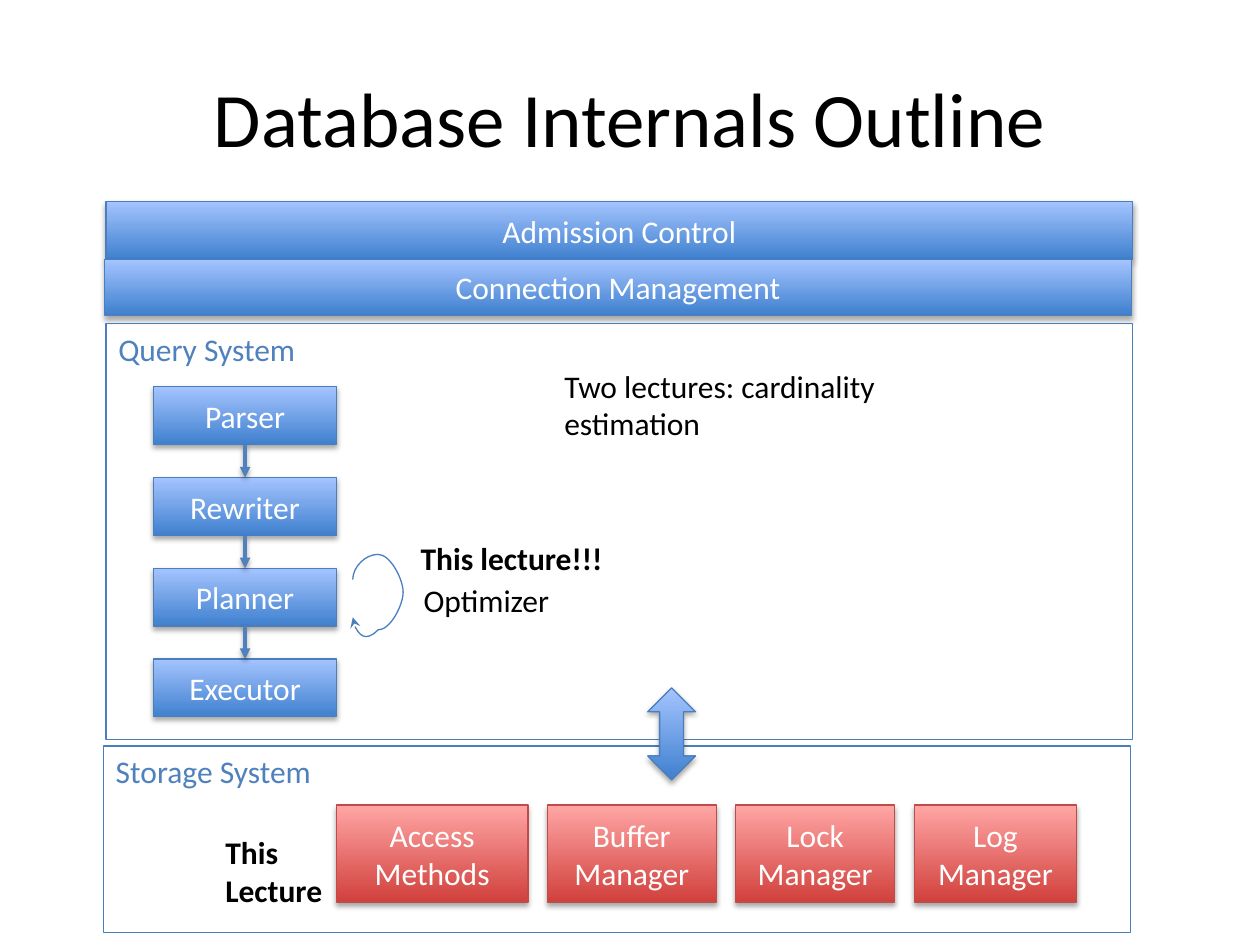
from dataclasses import dataclass

from lxml import etree
from pptx import Presentation
from pptx.dml.color import RGBColor
from pptx.enum.shapes import MSO_CONNECTOR, MSO_SHAPE
from pptx.enum.text import MSO_ANCHOR, PP_ALIGN
from pptx.oxml.ns import qn
from pptx.util import Inches, Pt

RECTANGLE, DOUBLE_ARROW = MSO_SHAPE.RECTANGLE, MSO_SHAPE.UP_DOWN_ARROW
STRAIGHT = MSO_CONNECTOR.STRAIGHT
LEFT, CENTER = PP_ALIGN.LEFT, PP_ALIGN.CENTER
TOP, MIDDLE = MSO_ANCHOR.TOP, MSO_ANCHOR.MIDDLE
BOTTOM_SITE, TOP_SITE = 2, 0
GRID = Inches(0.1)  # the slide is 100 columns by 75 rows


@dataclass(frozen=True)
class Theme:
    font: str = "Calibri"
    title_size: int = 44
    body_size: int = 18
    hairline: float = 0.75
    arrow_line: float = 2
    ink: str = "000000"
    paper: str = "FFFFFF"
    accent: str = "4F81BD"
    outline: str = "4B7EBC"
    blue: tuple = ("3F80CE", "A4C4FF", "4B7EBC")  # bottom, top, border
    red: tuple = ("D1403C", "FFA6A5", "BF4C48")


@dataclass(frozen=True)
class Box:
    """An area in grid columns and rows."""
    left: float
    top: float
    width: float
    height: float

    def inside(self, left, top, width, height):
        return Box(self.left + left, self.top + top, width, height)

    def lengths(self):
        return [round(GRID * n) for n in (self.left, self.top, self.width, self.height)]


THEME = Theme()


def color(code):
    return RGBColor.from_string(code)


def write(shape, text, ink=THEME.ink, size=THEME.body_size, align=LEFT,
          anchor=TOP, bold=False, wrap=True):
    frame = shape.text_frame
    frame.word_wrap = wrap
    frame.vertical_anchor = anchor
    para = frame.paragraphs[0]
    para.text = text
    para.alignment = align
    para.font.name, para.font.size = THEME.font, Pt(size)
    para.font.bold, para.font.color.rgb = bold, color(ink)


def add_label(page, box, text, **style):
    write(page.shapes.add_textbox(*box.lengths()), text, **style)


def set_line(shape, code, width, arrowhead=None):
    shape.line.color.rgb = color(code)
    shape.line.width = Pt(width)
    if arrowhead:
        etree.SubElement(shape.line._get_or_add_ln(), qn("a:tailEnd"), type=arrowhead)


def add_shadow(shape, opacity, blur, distance):
    """Give the shape a black shadow that falls straight down."""
    properties = shape._element.spPr
    for old in properties.findall(qn("a:effectLst")):
        properties.remove(old)
    effects = etree.SubElement(properties, qn("a:effectLst"))
    shadow = etree.SubElement(effects, qn("a:outerShdw"), blurRad=str(Pt(blur)),
                              dist=str(Pt(distance)), dir="5400000", rotWithShape="0")
    black = etree.SubElement(shadow, qn("a:srgbClr"), val=THEME.ink)
    etree.SubElement(black, qn("a:alpha"), val=str(opacity * 1000))


def add_block(page, box, palette, text="", preset=RECTANGLE):
    shape = page.shapes.add_shape(preset, *box.lengths())
    bottom, top, border = palette
    shape.fill.gradient()
    shape.fill.gradient_angle = 90
    for stop, code in zip(shape.fill.gradient_stops, (bottom, top)):
        stop.color.rgb = color(code)
    set_line(shape, border, THEME.hairline)
    add_shadow(shape, 35, 3.1, 1.8)
    if text:
        write(shape, text, THEME.paper, align=CENTER, anchor=MIDDLE)
    return shape


def add_frame(page, box, text):
    frame = page.shapes.add_shape(RECTANGLE, *box.lengths())
    frame.fill.background()
    frame.shadow.inherit = False
    set_line(frame, THEME.outline, THEME.hairline)
    write(frame, text, THEME.accent)


def join(page, upper, lower):
    arrow = page.shapes.add_connector(STRAIGHT, 0, 0, 0, 0)
    arrow.begin_connect(upper, BOTTOM_SITE)
    arrow.end_connect(lower, TOP_SITE)
    set_line(arrow, THEME.accent, THEME.arrow_line, "triangle")
    add_shadow(arrow, 38, 3.1, 1.6)


def add_loop(page, box):
    """Draw the curved arrow that leaves the planner and returns to it."""
    start, *points = [(box.left + x, box.top + y) for x, y in (
        (0, 2.5), (0.7, 1.2), (1.6, -0.1), (2.4, 0), (3.1, 0.2), (4.8, 2.5),
        (4.7, 3.6), (4.7, 4.7), (3, 6.5), (2, 6.7), (1, 7), (0.6, 6), (0.2, 5))]
    builder = page.shapes.build_freeform(*start, scale=GRID)
    builder.add_line_segments(points, close=False)
    loop = builder.convert_to_shape()
    outline = loop._element.find(".//" + qn("a:path"))
    steps = outline.findall(qn("a:lnTo"))
    for first in range(0, len(steps), 3):
        curve = etree.SubElement(outline, qn("a:cubicBezTo"))
        for step in steps[first:first + 3]:
            curve.append(step[0])
            outline.remove(step)
    loop.fill.background()
    loop.shadow.inherit = False
    set_line(loop, THEME.outline, THEME.hairline, "stealth")


def add_title(page, box, text):
    title = page.shapes.title
    title.left, title.top, title.width, title.height = box.lengths()
    write(title, text, size=THEME.title_size, align=CENTER, anchor=MIDDLE)


def add_front_end(page, box):
    add_block(page, box.inside(0.1, 0, box.width, 4.6), THEME.blue, "Admission Control")
    add_block(page, box.inside(0, 4.6, box.width, 4.4), THEME.blue, "Connection Management")


def add_query_system(page, box):
    add_frame(page, box, "Query System")
    stages = [add_block(page, box.inside(3.8, 5 + 7.2 * row, 14.5, 4.6), THEME.blue, name)
              for row, name in enumerate(("Parser", "Rewriter", "Planner", "Executor"))]
    for upper, lower in zip(stages, stages[1:]):
        join(page, upper, lower)
    add_loop(page, box.inside(19.3, 18.1, 4.7, 6.7))
    add_label(page, box.inside(23.8, 19.9, 12.8, 4), "Optimizer", align=CENTER, wrap=False)
    add_label(page, box.inside(24, 16.6, 19.3, 4), "This lecture!!!", bold=True)
    add_label(page, box.inside(35.4, 2.9, 36.8, 7.1), "Two lectures: cardinality estimation")


def add_storage_system(page, box):
    add_frame(page, box, "Storage System")
    left, gap = 18.5, 1.55
    for name, width in (("Access Methods", 15.2), ("Buffer Manager", 13.4),
                        ("Lock Manager", 12.6), ("Log Manager", 12.9)):
        add_block(page, box.inside(left, 4.7, width, 7.7), THEME.red, name)
        left += width + gap
    add_label(page, box.inside(8.7, 6.4, 9.8, 7.1), "This Lecture", bold=True)


def main():
    deck = Presentation()
    deck.slide_width, deck.slide_height = GRID * 100, GRID * 75
    page = deck.slides.add_slide(deck.slide_layouts.get_by_name("Title Only"))
    add_title(page, Box(5, 3, 90, 12.5), "Database Internals Outline")
    add_front_end(page, Box(8.3, 16, 81.5, 9))
    add_query_system(page, Box(8.4, 25.7, 81.5, 33))
    add_storage_system(page, Box(8.2, 59.2, 81.5, 14.8))
    add_block(page, Box(51.4, 54.6, 3.8, 7.3), THEME.blue, preset=DOUBLE_ARROW)
    deck.save("out.pptx")


if __name__ == "__main__":
    main()
